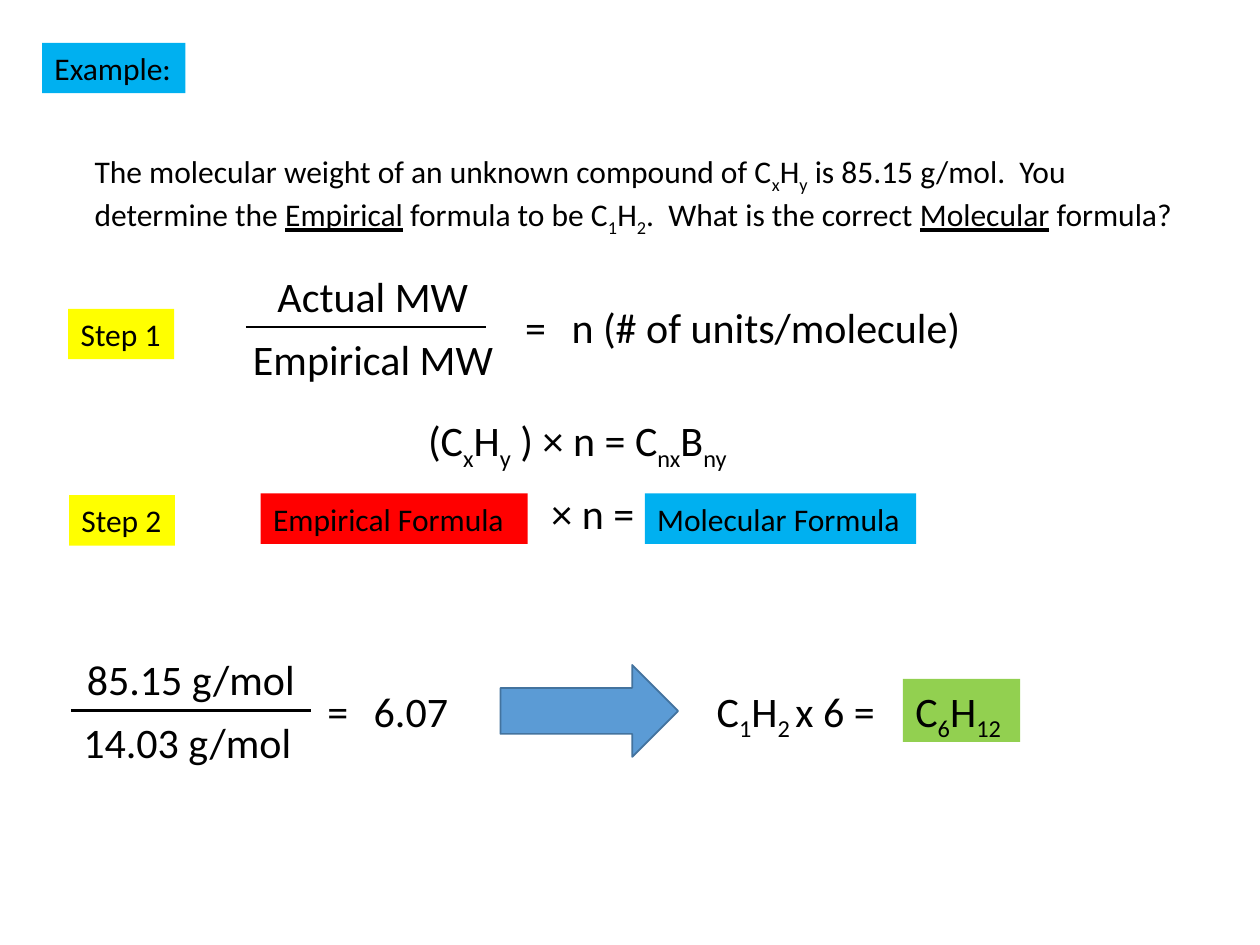
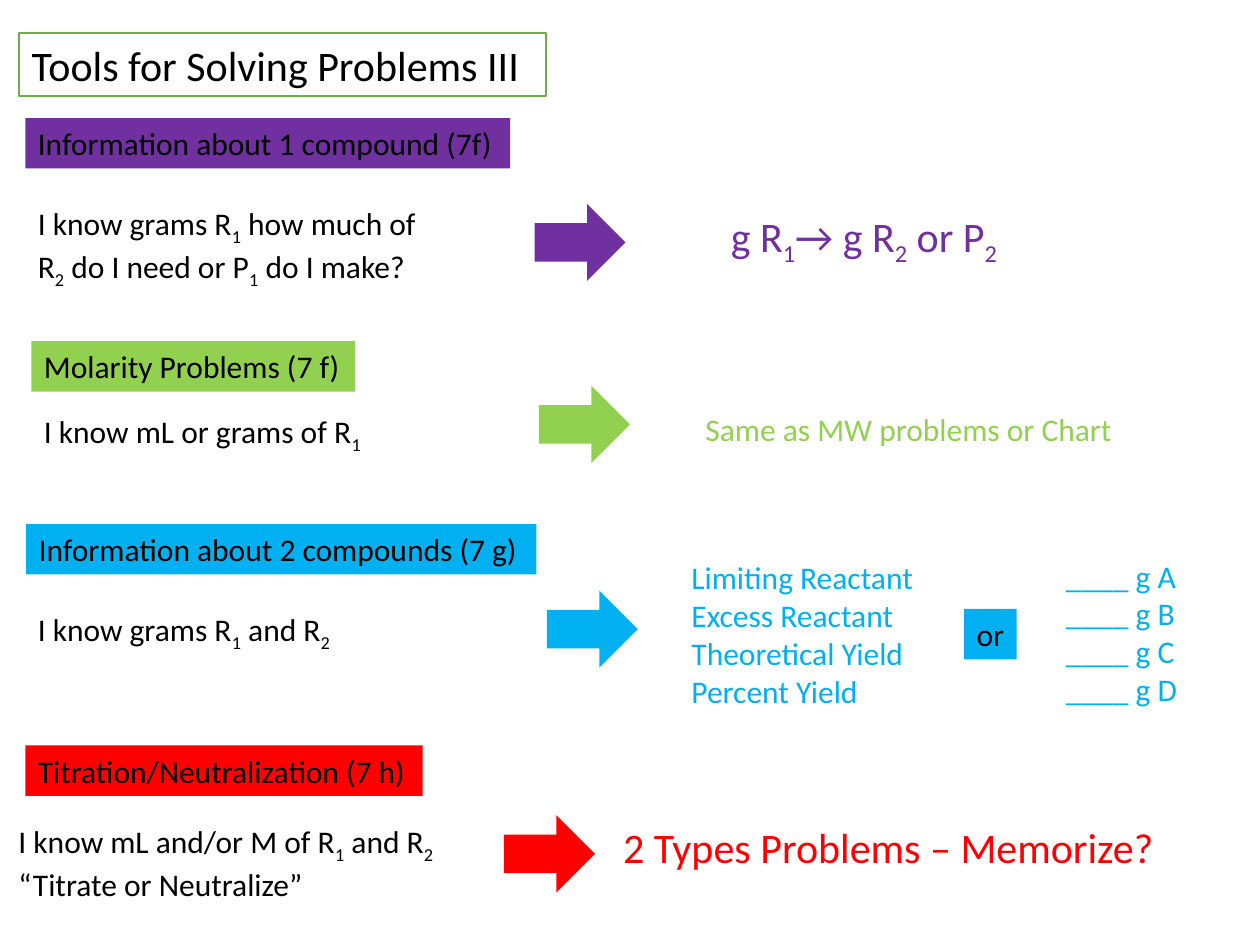
"""Builds two chemistry slides: a molecular formula example and a problem-solving overview."""
from lxml import etree
from pptx import Presentation
from pptx.dml.color import RGBColor
from pptx.enum.shapes import MSO_CONNECTOR, MSO_SHAPE
from pptx.enum.text import MSO_ANCHOR, MSO_AUTO_SIZE, PP_ALIGN
from pptx.oxml.ns import qn
from pptx.util import Pt

STRAIGHT = MSO_CONNECTOR.STRAIGHT
RECTANGLE, RIGHT_ARROW = MSO_SHAPE.RECTANGLE, MSO_SHAPE.RIGHT_ARROW
TOP, LEFT, FIT = MSO_ANCHOR.TOP, PP_ALIGN.LEFT, MSO_AUTO_SIZE.SHAPE_TO_FIT_TEXT

FONT = "Calibri"
BLACK, WHITE, RED, YELLOW = "000000", "FFFFFF", "FF0000", "FFFF00"
BLUE, GREEN, PURPLE = "00B0F0", "92D050", "7030A0"
STEEL, STEEL_EDGE, TITLE_EDGE = "5B9BD5", "43739E", "70AD47"
SMALL, LARGE = 18, 24
LINE_HEIGHT = {SMALL: 21.6, LARGE: 28.8}
PADDING = 7.2
BAR_LENGTH, EQUALS_WIDTH = 137, 26.5
TOPIC_ARROW = (52, 44)

# Text markup: |subscript| and ^underline^
QUESTION = ("The molecular weight of an unknown compound of C|x|H|y| is 85.15 g/mol.  You "
            "determine the ^Empirical^ formula to be C|1|H|2|.  What is the correct "
            "^Molecular^ formula?")

EXAMPLE_LABELS = [
    ("Example:", 24, 24.5, 82, SMALL, BLUE),
    ("Step 1", 39, 176.5, 60.5, SMALL, YELLOW),
    ("Step 2", 39.5, 283, 60.5, SMALL, YELLOW),
    ("Empirical Formula", 149, 282, 152.5, SMALL, RED),
    ("Molecular Formula", 368.5, 282, 155, SMALL, BLUE),
    ("C|6|H|12|", 516, 388, 67, LARGE, GREEN),
]
EXAMPLE_FORMULAS = [
    ("(C|x|H|y| ) × n = C|nx|B|ny|", 237.5, 233.5, 192),
    ("× n =", 308, 275, 67.5),
    ("C|1|H|2 |x 6 =", 402.5, 388, 108),
]
FRACTIONS = [
    dict(bar=(140.5, 187), equals=152.5,
         numerator=("Actual MW", 11, 124.5),
         denominator=("Empirical MW", -3, 152.5),
         quotient=("n (# of units/molecule)", 239)),
    dict(bar=(40.5, 406), equals=139.5,
         numerator=("85.15 g/mol", 2, 134),
         denominator=("14.03 g/mol", 0, 134),
         quotient=("6.07", 57.5)),
]
EXAMPLE_ARROW = (286, 380, 101.5, 52.5)

TOOLS_TITLE = ("Tools for Solving Problems III", 11, 19, 301)
TOPICS = [
    dict(color=PURPLE, arrow=(305.5, 116.5),
         heading=("Information about 1 compound (7f)", 14.5, 67.5, 277),
         known=("I know grams R|1| how much of R|2| do I need or P|1| do I make?",
                14.5, 113, 247.5),
         answers=[("g R|1|→ g R|2| or P|2|", 410.5, 116.5, 170.5, LARGE)]),
    dict(color=GREEN, arrow=(308, 220.5),
         heading=("Molarity Problems (7 f)", 18, 195, 185),
         known=("I know mL or grams of R|1|", 18, 232, 247.5),
         answers=[("Same as MW problems or Chart", 396, 230.5, 249, SMALL)]),
    dict(color=BLUE, arrow=(312.5, 337.5),
         heading=("Information about 2 compounds (7 g)", 15, 299.5, 291.5),
         known=("I know grams R|1| and R|2|", 14.5, 345, 247.5),
         answers=[("Limiting Reactant\nExcess Reactant\nTheoretical Yield\nPercent Yield",
                   388, 315.5, 142.5, SMALL),
                  ("____ g A\n____ g B\n____ g C\n____ g D", 602, 314.5, 83, SMALL)]),
    dict(color=RED, arrow=(288, 466),
         heading=("Titration/Neutralization (7 h)", 14.5, 426, 227),
         known=("I know mL and/or M of R|1| and R|2|\n“Titrate or Neutralize”",
                3.5, 466, 268),
         answers=[("2 Types Problems – Memorize?", 349, 466, 320.5, LARGE)]),
]
ALTERNATIVE = ("or", 551, 348, 30)


def rgb(value):
    return RGBColor.from_string(value)


def add_runs(paragraph, markup, size, color):
    for i, stretch in enumerate(markup.split("^")):
        for j, piece in enumerate(stretch.split("|")):
            if not piece:
                continue
            run = paragraph.add_run()
            run.text = piece
            run.font.name, run.font.size = FONT, Pt(size)
            run.font.color.rgb = rgb(color)
            if i % 2:
                run.font.underline = True
            if j % 2:
                run._r.get_or_add_rPr().set("baseline", "-25000")


def write(shape, markup, size, color, wrap):
    frame = shape.text_frame
    frame.word_wrap, frame.auto_size, frame.vertical_anchor = wrap, FIT, TOP
    for index, line in enumerate(markup.split("\n")):
        paragraph = frame.add_paragraph() if index else frame.paragraphs[0]
        paragraph.alignment = LEFT
        add_runs(paragraph, line, size, color)


def box_height(markup, size, lines=None):
    return (lines or markup.count("\n") + 1) * LINE_HEIGHT[size] + PADDING


def add_text(slide, markup, x, y, width, size=LARGE, color=BLACK, wrap=False, lines=None):
    height = box_height(markup, size, lines)
    box = slide.shapes.add_textbox(Pt(x), Pt(y), Pt(width), Pt(height))
    write(box, markup, size, color, wrap)


def add_filled(slide, kind, x, y, width, height, fill, edge=None):
    shape = slide.shapes.add_shape(kind, Pt(x), Pt(y), Pt(width), Pt(height))
    shape.shadow.inherit = False
    shape.fill.solid()
    shape.fill.fore_color.rgb = rgb(fill)
    if edge:
        shape.line.color.rgb = rgb(edge)
        shape.line.width = Pt(1)
    else:
        shape.line.fill.background()
    return shape


def add_label(slide, markup, x, y, width, size, fill, edge=None):
    label = add_filled(slide, RECTANGLE, x, y, width, box_height(markup, size), fill, edge)
    write(label, markup, size, BLACK, False)


def add_fraction(slide, bar, equals, numerator, denominator, quotient):
    x, y = bar
    height = box_height("", LARGE)
    for (markup, offset, width), top in ((numerator, y - height), (denominator, y)):
        add_text(slide, markup, x + offset, top, width)
    line = slide.shapes.add_connector(STRAIGHT, Pt(x), Pt(y), Pt(x + BAR_LENGTH), Pt(y))
    line.line.color.rgb = rgb(BLACK)
    line.line.width = Pt(1.25)
    etree.SubElement(line._element.spPr, qn("a:effectLst"))
    middle = y - height / 2
    add_text(slide, "=", x + equals, middle, EQUALS_WIDTH)
    result, width = quotient
    add_text(slide, result, x + equals + EQUALS_WIDTH, middle, width)


def build_example(slide):
    add_text(slide, QUESTION, 47, 83.5, 639.5, SMALL, wrap=True, lines=2)
    for fraction in FRACTIONS:
        add_fraction(slide, **fraction)
    for formula in EXAMPLE_FORMULAS:
        add_text(slide, *formula)
    for label in EXAMPLE_LABELS:
        add_label(slide, *label)
    add_filled(slide, RIGHT_ARROW, *EXAMPLE_ARROW, STEEL, STEEL_EDGE)


def build_tools(slide):
    add_label(slide, *TOOLS_TITLE, LARGE, WHITE, TITLE_EDGE)
    for topic in TOPICS:
        color = topic["color"]
        add_label(slide, *topic["heading"], SMALL, color)
        lines = 2 if len(topic["known"][0]) > 40 else 1
        add_text(slide, *topic["known"], SMALL, wrap=True, lines=lines)
        add_filled(slide, RIGHT_ARROW, *topic["arrow"], *TOPIC_ARROW, color)
        for answer in topic["answers"]:
            add_text(slide, *answer, color)
    add_label(slide, *ALTERNATIVE, SMALL, BLUE)


def main():
    deck = Presentation()
    deck.slide_width, deck.slide_height = Pt(720), Pt(540)
    for build in (build_example, build_tools):
        build(deck.slides.add_slide(deck.slide_layouts[6]))
    deck.save("out.pptx")


if __name__ == "__main__":
    main()
